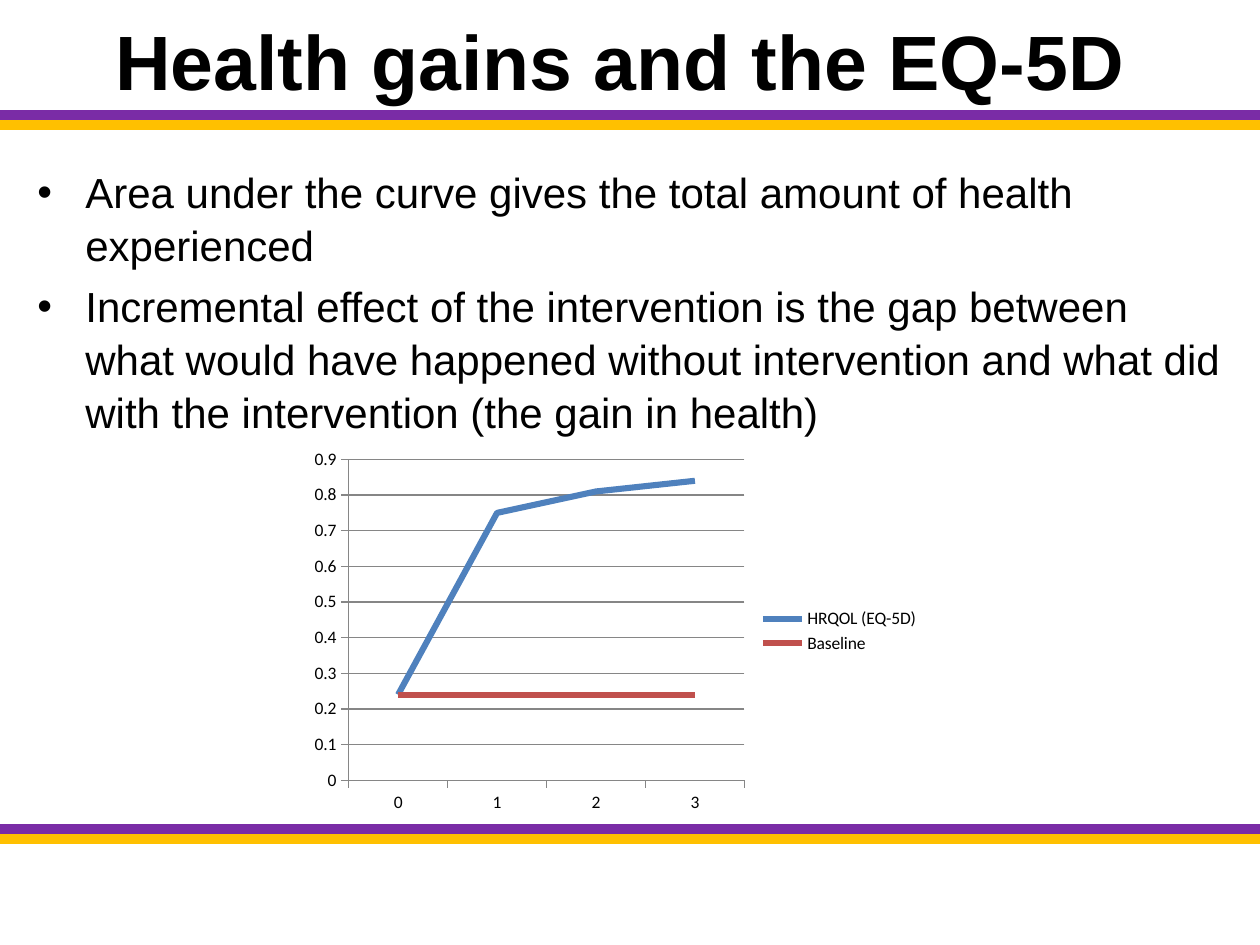
from lxml import etree
from pptx import Presentation
from pptx.chart.data import CategoryChartData
from pptx.dml.color import RGBColor
from pptx.enum.chart import XL_CHART_TYPE, XL_LEGEND_POSITION, XL_MARKER_STYLE, XL_TICK_MARK
from pptx.enum.shapes import MSO_CONNECTOR
from pptx.enum.text import MSO_ANCHOR, MSO_AUTO_SIZE, PP_ALIGN
from pptx.oxml.ns import qn
from pptx.util import Pt

LINE, STRAIGHT = XL_CHART_TYPE.LINE, MSO_CONNECTOR.STRAIGHT
RIGHT, NO_MARK, TICK_OUT = XL_LEGEND_POSITION.RIGHT, XL_MARKER_STYLE.NONE, XL_TICK_MARK.OUTSIDE
TOP, MIDDLE, NO_FIT = MSO_ANCHOR.TOP, MSO_ANCHOR.MIDDLE, MSO_AUTO_SIZE.NONE
LEFT, CENTER = PP_ALIGN.LEFT, PP_ALIGN.CENTER

# Content
TITLE = "Health gains and the EQ-5D"
POINTS = [
    "Area under the curve gives the total amount of health experienced",
    "Incremental effect of the intervention is the gap between what would have "
    "happened without intervention and what did with the intervention "
    "(the gain in health)",
]
YEARS = ["0", "1", "2", "3"]
SERIES = [
    ("HRQOL (EQ-5D)", [0.24, 0.75, 0.81, 0.84], "blue"),
    ("Baseline", [0.24] * 4, "red"),
]

# Theme and layout, in px
THEME = {
    "black": "000000", "purple": "7A2CA6", "gold": "FFC000",
    "blue": "4F81BD", "red": "C0504D", "grey": "868686",
    "font": "Arial", "chart_font": "Calibri",
    "title": 44, "body": 24, "chart": 10, "band": 6, "curve": 3.5, "grid": 0.75,
}
PX = 914400 // 126
WIDE, HIGH = 1260, 945
TITLE_BOX = (25, 26, 1191, 68)
BODY_BOX = (25, 158, 1211, 624)
CHART_BOX = (302, 442, 630, 378)
BANDS = [(115, "purple"), (125, "gold"), (829, "purple"), (839, "gold")]
INDENT = 48


def emu(*sizes):
    return [size * PX for size in sizes]


def color(name):
    return RGBColor.from_string(THEME[name])


def style(font, face, size, bold=False):
    font.name, font.size, font.bold = THEME[face], Pt(THEME[size]), bold
    font.color.rgb = color("black")


def stroke(line, name, width):
    line.color.rgb = color(name)
    line.width = Pt(THEME[width])


def add_bullet(para):
    props = para._p.get_or_add_pPr()
    props.set("marL", str(INDENT * PX))
    props.set("indent", str(-INDENT * PX))
    etree.SubElement(props, qn("a:buFont")).set("typeface", THEME["font"])
    etree.SubElement(props, qn("a:buChar")).set("char", "•")


def put_text(shape, lines, size, bold=False, align=LEFT, anchor=TOP,
             bullet=False, gap=0, pitch=1.0):
    frame = shape.text_frame
    frame.word_wrap, frame.auto_size = True, NO_FIT
    frame.vertical_anchor = anchor
    for i, text in enumerate(lines):
        para = frame.add_paragraph() if i else frame.paragraphs[0]
        para.alignment, para.line_spacing = align, pitch
        para.space_before = Pt(gap if i else 0)
        if bullet:
            add_bullet(para)
        run = para.add_run()
        run.text = text
        style(run.font, "font", size, bold)


def add_band(slide, y, name):
    band = slide.shapes.add_connector(STRAIGHT, *emu(0, y, WIDE, y))
    stroke(band.line, name, "band")
    etree.SubElement(band._element.spPr, qn("a:effectLst"))


def add_curves(slide):
    data = CategoryChartData(number_format="General")
    data.categories = YEARS
    for name, values, _ in SERIES:
        data.add_series(name, values)
    chart = slide.shapes.add_chart(LINE, *emu(*CHART_BOX), data).chart
    style(chart.font, "chart_font", "chart")
    chart.has_title = False
    chart.has_legend = True
    chart.legend.position = RIGHT
    chart.legend.include_in_layout = False
    chart.plots[0].vary_by_categories = False

    for curve, (_, _, name) in zip(chart.plots[0].series, SERIES):
        curve.smooth = False
        curve.marker.style = NO_MARK
        stroke(curve.format.line, name, "curve")

    scale = chart.value_axis
    scale.minimum_scale, scale.maximum_scale, scale.major_unit = 0, 0.9, 0.1
    scale.has_major_gridlines = True
    stroke(scale.major_gridlines.format.line, "grey", "grid")
    for axis in (chart.category_axis, scale):
        axis.major_tick_mark = TICK_OUT
        stroke(axis.format.line, "grey", "grid")


def main():
    deck = Presentation()
    deck.slide_width, deck.slide_height = emu(WIDE, HIGH)
    slide = deck.slides.add_slide(deck.slide_layouts[5])

    # Bands above and below the content
    for y, name in BANDS:
        add_band(slide, y, name)

    # Title
    title = slide.shapes.title
    title.left, title.top, title.width, title.height = emu(*TITLE_BOX)
    put_text(title, [TITLE], "title", bold=True, align=CENTER, anchor=MIDDLE)

    # Bullets
    body = slide.shapes.add_textbox(*emu(*BODY_BOX))
    put_text(body, POINTS, "body", bullet=True, gap=THEME["body"] * 0.2, pitch=1.05)

    # Chart
    add_curves(slide)
    deck.save("out.pptx")


if __name__ == "__main__":
    main()
